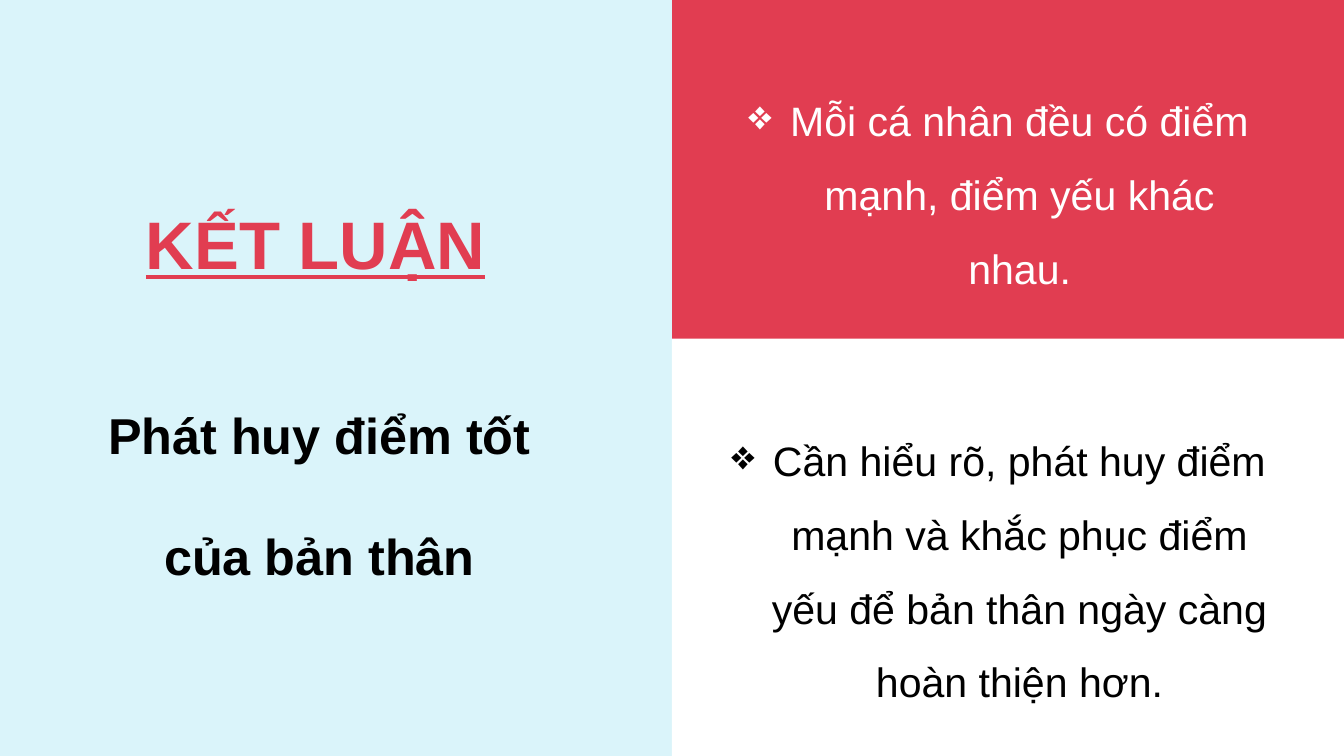
import pptx
import pptx.util
import pptx.dml.color
import pptx.enum.shapes
import pptx.enum.text
from lxml import etree

Inches, Pt = pptx.util.Inches, pptx.util.Pt
RGB = pptx.dml.color.RGBColor.from_string
PP_ALIGN = pptx.enum.text.PP_ALIGN
COLORS = {"red": "E13D51", "blue": "DAF4FA", "white": "FFFFFF", "black": "000000"}

prs = pptx.Presentation()
prs.slide_width, prs.slide_height = Inches(20), Inches(11.25)
s = prs.slides.add_slide(prs.slide_layouts[5])
s.background.fill.solid()
s.background.fill.fore_color.rgb = RGB(COLORS["red"])


def set_text(sp, text, size, color, spacing, align, bold=False, inset=0.0):
    tf = sp.text_frame
    tf.word_wrap = True
    tf.auto_size = pptx.enum.text.MSO_AUTO_SIZE.NONE
    tf.vertical_anchor = pptx.enum.text.MSO_ANCHOR.TOP
    tf.margin_left = tf.margin_right = Inches(inset)
    tf.margin_top = tf.margin_bottom = Inches(inset / 2)
    p = tf.paragraphs[0]
    p.text = text
    p.alignment, p.line_spacing = align, spacing
    p.font.name, p.font.size, p.font.bold = "Arial", Pt(size), bold
    p.font.color.rgb = RGB(COLORS[color])
    return p


# Left and lower right panels
for x, y, h, color in [(0, 0, 11.25, "blue"), (10, 5.04, 6.21, "white")]:
    sp = s.shapes.add_shape(pptx.enum.shapes.MSO_SHAPE.RECTANGLE,
                            Inches(x), Inches(y), Inches(10), Inches(h))
    sp.shadow.inherit = False
    sp.fill.solid()
    sp.fill.fore_color.rgb = RGB(COLORS[color])
    sp.line.fill.background()

# Title, brought in front of the panels
title = s.shapes.title
title.left, title.top = Inches(2.17), Inches(3.59)
title.width, title.height = Inches(5.83), Inches(0.63)
p = set_text(title, "KẾT LUẬN", 72, "red", Pt(44.8), PP_ALIGN.LEFT, bold=True)
p.font.underline = True
title.element.getparent().append(title.element)

# Conclusions with hanging bullets
conclusions = [
    (1.05, 3.19, "white", "Mỗi cá nhân đều có điểm mạnh, điểm yếu khác nhau."),
    (6.11, 4.44, "black", "Cần hiểu rõ, phát huy điểm mạnh và khắc phục điểm yếu "
                          "để bản thân ngày càng hoàn thiện hơn."),
]
for y, h, color, text in conclusions:
    sp = s.shapes.add_textbox(Inches(10.85), Inches(y), Inches(8.03), Inches(h))
    p = set_text(sp, text, 44, color, 1.5, PP_ALIGN.CENTER)
    pPr = p._p.get_or_add_pPr()
    pPr.set("marL", str(Inches(0.62)))
    pPr.set("indent", str(-Inches(0.62)))
    bullet = etree.Element(pptx.oxml.ns.qn("a:buChar"), char="❖")
    pPr.find(pptx.oxml.ns.qn("a:defRPr")).addprevious(bullet)

# Subtitle
sp = s.shapes.add_textbox(Inches(1.5), Inches(5.06), Inches(6.51), Inches(3.74))
set_text(sp, "Phát huy điểm tốt của bản thân", 54, "black", 2.0,
         PP_ALIGN.CENTER, bold=True, inset=0.1)

prs.save("out.pptx")
